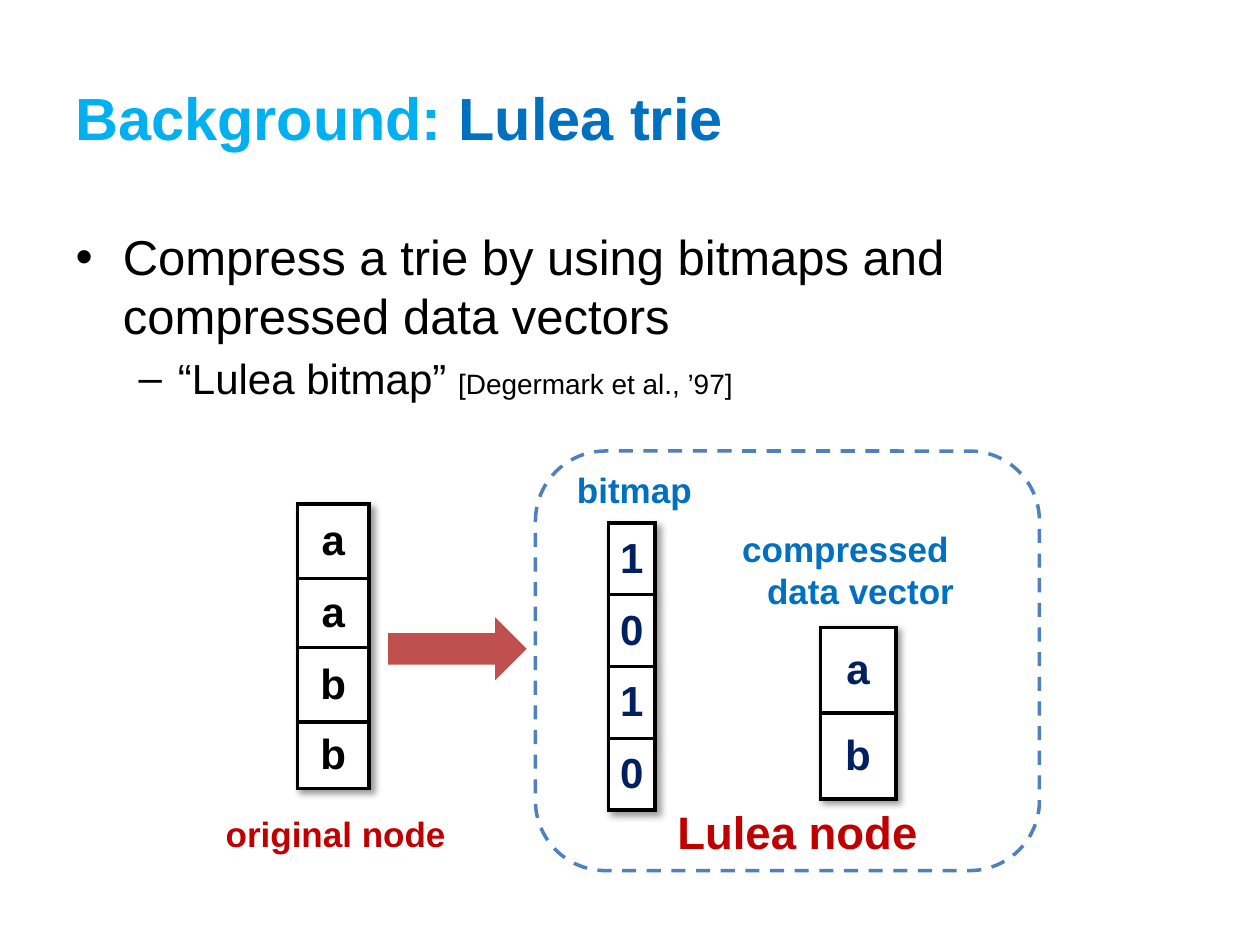
from lxml.etree import SubElement as Sub
from pptx import Presentation
from pptx.dml.color import RGBColor
from pptx.enum.dml import MSO_LINE as Dash
from pptx.enum.shapes import MSO_SHAPE as Shape
from pptx.enum.text import MSO_ANCHOR as Anchor, MSO_AUTO_SIZE as Fit, PP_ALIGN as Align
from pptx.oxml.ns import qn
from pptx.util import Inches, Pt

BLACK = RGBColor(0x00, 0x00, 0x00)
WHITE = RGBColor(0xFF, 0xFF, 0xFF)
SKY = RGBColor(0x00, 0xB0, 0xF0)
BLUE = RGBColor(0x00, 0x70, 0xC0)
NAVY = RGBColor(0x00, 0x20, 0x60)
RED = RGBColor(0xC0, 0x00, 0x00)
FRAME = RGBColor(0x4F, 0x81, 0xBD)
ARROW = RGBColor(0xC0, 0x50, 0x4D)


def add_run(para, text, size, color, bold=False):
    run = para.add_run()
    run.text = text
    font = run.font
    font.name, font.size, font.bold = "Arial", Pt(size), bold
    font.color.rgb = color


def place(shape, left, top, width, height):
    shape.left, shape.top = Inches(left), Inches(top)
    shape.width, shape.height = Inches(width), Inches(height)


def fill_title(title):
    place(title, 0.5, 0.3, 9, 1.25)
    frame = title.text_frame
    frame.auto_size = Fit.NONE
    frame.vertical_anchor = Anchor.MIDDLE
    para = frame.paragraphs[0]
    para.alignment = Align.LEFT
    add_run(para, "Background: ", 34, SKY, True)
    add_run(para, "Lulea trie", 34, BLUE, True)


def fill_body(body):
    place(body, 0.5, 1.75, 9, 1.67)
    frame = body.text_frame
    frame.auto_size = Fit.NONE
    add_run(frame.paragraphs[0],
            "Compress a trie by using bitmaps and compressed data vectors", 28, BLACK)
    para = frame.add_paragraph()
    para.level = 1
    add_run(para, "“Lulea bitmap” ", 24, BLACK)
    add_run(para, "[Degermark et al., ’97]", 16, BLACK)


def add_shape(slide, kind, left, top, width, height):
    shape = slide.shapes.add_shape(
        kind, Inches(left), Inches(top), Inches(width), Inches(height))
    shape.shadow.inherit = False
    return shape


def add_label(slide, lines, left, top, width, height, size, color):
    """Each line is its text with a left and a right indent."""
    box = slide.shapes.add_textbox(
        Inches(left), Inches(top), Inches(width), Inches(height))
    frame = box.text_frame
    frame.word_wrap = True
    for i, (text, before, after) in enumerate(lines):
        para = frame.add_paragraph() if i else frame.paragraphs[0]
        para.alignment = Align.CENTER
        props = para._p.get_or_add_pPr()
        props.set("marL", str(Inches(before)))
        props.set("marR", str(Inches(after)))
        add_run(para, text, size, color, True)


def add_edges(cell):
    props = cell._tc.get_or_add_tcPr()
    for side in ("lnL", "lnR", "lnT", "lnB"):
        line = Sub(props, qn("a:" + side), w=str(Pt(2.25)))
        Sub(Sub(line, qn("a:solidFill")), qn("a:srgbClr"), val=str(BLACK))


def add_shade(table):
    props = table._tbl.tblPr
    effect = props.makeelement(qn("a:effectLst"), {})
    props.insert(0, effect)
    shade = Sub(effect, qn("a:outerShdw"), blurRad=str(Pt(4)), dist=str(Pt(3)),
                dir="2700000", algn="tl", rotWithShape="0")
    tint = Sub(shade, qn("a:srgbClr"), val=str(BLACK))
    Sub(tint, qn("a:alpha"), val="40000")


def add_node(slide, marks, left, top, width, rows, color):
    """Draw a trie node as a one-column table."""
    table = slide.shapes.add_table(
        len(marks), 1, Inches(left), Inches(top), Inches(width), Inches(sum(rows))).table
    table.first_row = table.horz_banding = False
    add_shade(table)
    for i, (mark, height) in enumerate(zip(marks, rows)):
        table.rows[i].height = Inches(height)
        cell = table.cell(i, 0)
        cell.margin_left = cell.margin_right = 0
        cell.margin_top = cell.margin_bottom = 0
        cell.vertical_anchor = Anchor.MIDDLE
        add_edges(cell)
        cell.fill.solid()
        cell.fill.fore_color.rgb = WHITE
        para = cell.text_frame.paragraphs[0]
        para.alignment = Align.CENTER
        add_run(para, mark, 24, color, True)


def main():
    deck = Presentation()
    deck.slide_width, deck.slide_height = Inches(10), Inches(7.5)
    slide = deck.slides.add_slide(deck.slide_layouts[1])
    fill_title(slide.shapes.title)
    fill_body(slide.placeholders[1])

    # Dashed frame of the Lulea node
    frame = add_shape(slide, Shape.ROUNDED_RECTANGLE, 4.25, 3.58, 4, 3.33)
    frame.fill.background()
    frame.line.color.rgb = FRAME
    frame.line.width = Pt(2)
    frame.line.dash_style = Dash.DASH

    # Original node, bitmap and data vector
    add_node(slide, "aabb", 2.36, 4, 0.57, [0.59, 0.55, 0.59, 0.53], BLACK)
    add_node(slide, "1010", 4.83, 4.15, 0.37, [0.57] * 4, NAVY)
    add_node(slide, "ab", 6.51, 4.98, 0.6, [0.68] * 2, NAVY)

    # Labels
    add_label(slide, [("bitmap", 0, 0)], 4.34, 3.67, 1.39, 0.44, 20, BLUE)
    add_label(slide, [("compressed", 0, 0.16), ("data vector", 0.08, 0)],
              5.58, 4.14, 2.42, 0.77, 20, BLUE)
    add_label(slide, [("original node", 0, 0)], 1.58, 6.4, 2.17, 0.44, 20, RED)
    add_label(slide, [("Lulea node", 0, 0)], 4.83, 6.33, 3, 0.54, 26, RED)

    # Arrow from original to compressed form
    arrow = add_shape(slide, Shape.RIGHT_ARROW, 3.08, 4.9, 1.1, 0.5)
    arrow.fill.solid()
    arrow.fill.fore_color.rgb = ARROW
    arrow.line.fill.background()

    deck.save("out.pptx")


if __name__ == "__main__":
    main()
